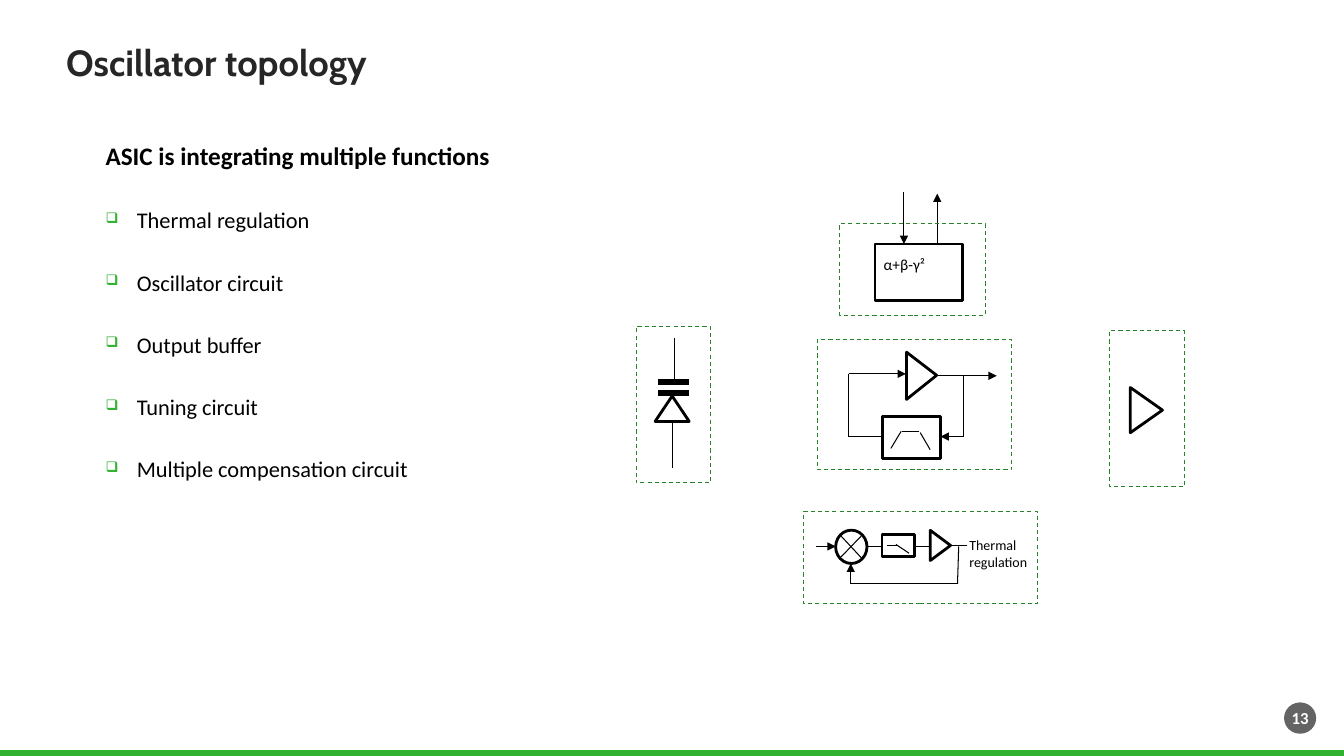
from lxml import etree
from pptx import Presentation
from pptx.dml.color import RGBColor
from pptx.enum.dml import MSO_LINE
from pptx.enum.shapes import MSO_CONNECTOR, MSO_SHAPE
from pptx.enum.text import MSO_ANCHOR, PP_ALIGN
from pptx.oxml.ns import qn
from pptx.util import Cm, Pt

BLACK = RGBColor(0x00, 0x00, 0x00)
WHITE = RGBColor(0xFF, 0xFF, 0xFF)
TITLE_GREY = RGBColor(0x26, 0x26, 0x26)
BADGE_GREY = RGBColor(0x64, 0x64, 0x64)
FOOTER_GREEN = RGBColor(0x30, 0xB1, 0x2F)
BULLET_GREEN = RGBColor(0x34, 0xB2, 0x33)
FRAME_GREEN = RGBColor(0x26, 0x84, 0x26)

RECTANGLE = MSO_SHAPE.RECTANGLE
TRIANGLE = MSO_SHAPE.ISOSCELES_TRIANGLE
OVAL = MSO_SHAPE.OVAL
STRAIGHT = MSO_CONNECTOR.STRAIGHT
DASH = MSO_LINE.DASH
TOP = MSO_ANCHOR.TOP
MIDDLE = MSO_ANCHOR.MIDDLE
LEFT = PP_ALIGN.LEFT
CENTER = PP_ALIGN.CENTER

FUNCTIONS = [
    "Thermal regulation",
    "Oscillator circuit",
    "Output buffer",
    "Tuning circuit",
    "Multiple compensation circuit",
]


def write(paragraph, text, size=16, font="Calibri", color=BLACK, bold=False, align=LEFT):
    """Put formatted text into a paragraph."""
    run = paragraph.add_run()
    run.text = text
    run.font.size = Pt(size)
    run.font.name = font
    run.font.color.rgb = color
    run.font.bold = bold
    paragraph.alignment = align


def add_text_frame(slide, left, top, width, height, anchor=TOP):
    """Add a wrapping text box and return its text frame."""
    box = slide.shapes.add_textbox(Cm(left), Cm(top), Cm(width), Cm(height))
    box.text_frame.word_wrap = True
    box.text_frame.vertical_anchor = anchor
    return box.text_frame


def add_symbol(slide, kind, left, top, width, height, rotation=0):
    """Add an unfilled circuit symbol with a heavy black outline."""
    symbol = slide.shapes.add_shape(kind, Cm(left), Cm(top), Cm(width), Cm(height))
    symbol.shadow.inherit = False
    symbol.fill.background()
    symbol.line.color.rgb = BLACK
    symbol.line.width = Pt(2)
    symbol.rotation = rotation
    return symbol


def add_block_frame(slide, left, top, width, height):
    """Add the dashed green frame around a functional block."""
    frame = add_symbol(slide, RECTANGLE, left, top, width, height)
    frame.line.color.rgb = FRAME_GREEN
    frame.line.width = Pt(0.75)
    frame.line.dash_style = DASH


def add_wire(slide, x1, y1, x2, y2, color=BLACK, width=0.75, arrow=False):
    """Add a straight wire, with an arrowhead at its end if asked."""
    wire = slide.shapes.add_connector(STRAIGHT, Cm(x1), Cm(y1), Cm(x2), Cm(y2))
    wire.line.color.rgb = color
    wire.line.width = Pt(width)
    if arrow:
        etree.SubElement(wire.line._get_or_add_ln(), qn("a:tailEnd"), type="triangle")
    etree.SubElement(wire._element.spPr, qn("a:effectLst"))


def add_wires(slide, ends, **style):
    """Add several wires of one style."""
    for points in ends:
        add_wire(slide, *points, **style)


def indent(paragraph, margin, first_line=0):
    """Set the left margin and first-line indent of a paragraph."""
    properties = paragraph._p.get_or_add_pPr()
    properties.set("marL", str(Cm(margin)))
    properties.set("indent", str(Cm(first_line)))
    return properties


def add_bullet(paragraph):
    """Give a paragraph a hanging green box bullet."""
    properties = indent(paragraph, 1.78, -0.79)
    bullet_color = etree.SubElement(properties, qn("a:buClr"))
    etree.SubElement(bullet_color, qn("a:srgbClr"), val=str(BULLET_GREEN))
    etree.SubElement(properties, qn("a:buSzPct"), val="65000")
    etree.SubElement(properties, qn("a:buChar"), char="❑")


def add_function_list(slide):
    """Add the heading and the list of integrated functions."""
    body = add_text_frame(slide, 1.42, 3.42, 13.5, 9.3)
    heading = body.paragraphs[0]
    indent(heading, 0.99)
    write(heading, "ASIC is integrating multiple functions", size=18, bold=True)
    for function in FUNCTIONS:
        item = body.add_paragraph()
        add_bullet(item)
        item.space_before = Pt(25.3)
        write(item, function)


def add_footer(slide):
    """Add the bottom bar and the page number badge."""
    add_wire(slide, 0, 18.97, 33.87, 18.97, color=FOOTER_GREEN, width=4)
    badge = add_symbol(slide, OVAL, 32.36, 17.7, 0.81, 0.79)
    badge.fill.solid()
    badge.fill.fore_color.rgb = BADGE_GREY
    badge.line.fill.background()
    number = badge.text_frame
    number.margin_left = number.margin_right = 0
    number.margin_top = number.margin_bottom = 0
    number.word_wrap = False
    number.vertical_anchor = MIDDLE
    write(number.paragraphs[0], "13", size=12, color=WHITE, bold=True, align=CENTER)


def add_thermal_regulation(slide):
    """Draw the thermal regulation loop."""
    add_symbol(slide, TRIANGLE, 23.32, 13.49, 0.76, 0.51, rotation=90)
    add_symbol(slide, OVAL, 21.06, 13.36, 0.79, 0.84)
    add_symbol(slide, RECTANGLE, 22.23, 13.46, 0.81, 0.56)
    mixer_cross = [(21.16, 14.07, 21.72, 13.49), (21.72, 14.07, 21.18, 13.49)]
    inputs = [(20.57, 13.77, 21.06, 13.77), (21.44, 14.71, 21.44, 14.2)]
    signal_path = [(22.25, 13.77, 21.84, 13.77), (23.44, 13.77, 23.04, 13.77),
                   (24.38, 13.74, 23.95, 13.74)]
    feedback = [(24.13, 14.71, 21.41, 14.71), (24.13, 14.71, 24.16, 13.77)]
    low_pass = [(22.61, 13.74, 22.35, 13.74), (22.91, 13.94, 22.58, 13.72)]
    add_wires(slide, mixer_cross + signal_path + feedback + low_pass)
    add_wires(slide, inputs, arrow=True)
    label = add_text_frame(slide, 24.18, 13.39, 3, 1.12)
    write(label.paragraphs[0], "Thermal regulation", size=10)
    add_block_frame(slide, 20.24, 12.9, 5.92, 2.31)


def add_oscillator(slide):
    """Draw the amplifier with its band-pass feedback."""
    add_symbol(slide, RECTANGLE, 22.25, 10.49, 1.45, 1.07)
    amplifier = add_symbol(slide, TRIANGLE, 22.63, 9.09, 1.19, 0.76, rotation=90)
    amplifier.adjustments[0] = 0.49
    arrows = [(21.39, 9.42, 22.83, 9.42), (23.65, 9.47, 25.12, 9.47),
              (24.28, 11, 23.7, 11)]
    feedback = [(21.39, 9.42, 21.39, 11), (24.28, 9.47, 24.28, 11),
                (21.39, 11, 22.28, 11)]
    band_pass = [(22.71, 10.87, 22.45, 11.3), (23.44, 11.33, 23.19, 10.9),
                 (23.16, 10.87, 22.73, 10.87)]
    add_wires(slide, arrows, arrow=True)
    add_wires(slide, feedback + band_pass)
    add_block_frame(slide, 20.6, 8.56, 4.9, 3.28)


def add_tuning_diode(slide):
    """Draw the tuning diode."""
    add_symbol(slide, TRIANGLE, 16.51, 9.98, 0.86, 0.64)
    leads = [(16.94, 10.62, 16.94, 11.79), (16.99, 8.51, 16.99, 9.68)]
    plates = [(16.59, y, 17.36, y) for y in (9.63, 9.91)]
    add_wires(slide, leads)
    add_wires(slide, plates, width=4.5)
    add_block_frame(slide, 16.03, 8.23, 1.88, 3.94)


def add_output_buffer(slide):
    """Draw the output buffer."""
    add_symbol(slide, TRIANGLE, 28.32, 9.93, 1.14, 0.81, rotation=90)
    add_block_frame(slide, 27.97, 8.33, 1.88, 3.94)


def add_compensation(slide):
    """Draw the compensation block."""
    add_symbol(slide, RECTANGLE, 22.05, 6.15, 2.21, 1.42)
    add_wires(slide, [(22.78, 4.85, 22.78, 6.15), (23.62, 6.15, 23.62, 4.88)], arrow=True)
    formula = add_text_frame(slide, 22.02, 6.3, 2.54, 1.02)
    write(formula.paragraphs[0], "α+β-γ²", size=11)
    add_block_frame(slide, 21.16, 5.64, 3.68, 2.31)


def main():
    """Build the oscillator topology slide."""
    deck = Presentation()
    deck.slide_width, deck.slide_height = Cm(33.87), Cm(19.05)
    slide = deck.slides.add_slide(deck.slide_layouts[6])
    add_footer(slide)
    add_function_list(slide)
    title = add_text_frame(slide, 1.42, 0.61, 23.01, 1.9, anchor=MIDDLE)
    write(title.paragraphs[0], "Oscillator topology", size=26, font="Cabin",
          color=TITLE_GREY, bold=True)
    for add_block in (add_thermal_regulation, add_oscillator, add_tuning_diode,
                      add_output_buffer, add_compensation):
        add_block(slide)
    deck.save("out.pptx")


if __name__ == "__main__":
    main()
